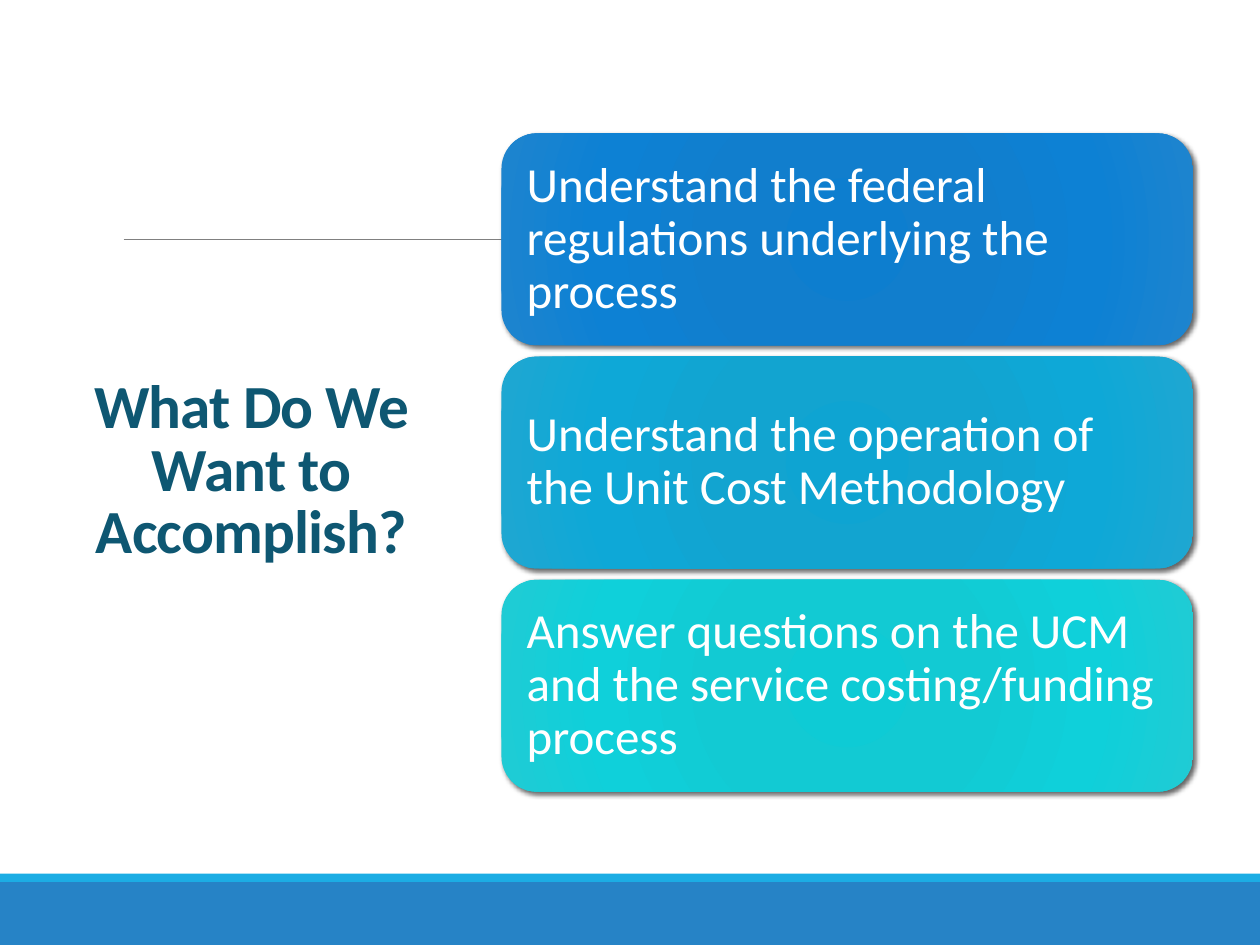
from lxml.etree import SubElement
from pptx import Presentation
from pptx.dml.color import RGBColor
from pptx.enum.shapes import MSO_CONNECTOR as Connector, MSO_SHAPE as Shape
from pptx.enum.text import MSO_ANCHOR as Anchor, PP_ALIGN as Align
from pptx.oxml import parse_xml
from pptx.oxml.ns import nsdecls, qn
from pptx.util import Cm, Pt

TITLE = "What Do We Want to Accomplish?"
GOALS = [
    ("Understand the federal regulations underlying the process",
     ("0D7ECF", "117ECD", "0D81D4", "1E84CE")),
    ("Understand the operation of the Unit Cost Methodology",
     ("0EA4D2", "12A4D0", "0EA8D7", "1FA7D1")),
    ("Answer questions on the UCM and the service costing/funding process",
     ("0ECBD5", "12CAD3", "0FD0DA", "20CBD4")),
]
STOPS = (0, 34, 70, 100)

FONT = "Calibri"
BLUE = RGBColor(0x26, 0x83, 0xC6)
CYAN = RGBColor(0x1C, 0xAD, 0xE4)
GREY = RGBColor(0x80, 0x80, 0x80)
TEAL = RGBColor(0x0E, 0x57, 0x72)
WHITE = RGBColor(0xFF, 0xFF, 0xFF)

SLIDE_W, SLIDE_H = Cm(25.4), Cm(19.05)
FOOTER_H, STRIPE_H = Cm(1.27), Cm(0.17)
CARD_X, CARD_Y = Cm(10.11), Cm(2.69)
CARD_W, CARD_H, CARD_GAP = Cm(13.94), Cm(4.27), Cm(0.23)
CARD_INSET = Cm(0.3)


def write(frame, text, size, color, align, spacing, bold=False):
    frame.word_wrap = True
    frame.vertical_anchor = Anchor.MIDDLE
    frame.text = text
    paragraph = frame.paragraphs[0]
    paragraph.alignment = align
    paragraph.line_spacing = spacing
    font = paragraph.runs[0].font
    font.name, font.size, font.bold = FONT, Pt(size), bold
    font.color.rgb = color
    return paragraph.runs[0]


def add_band(slide, top, height, color):
    band = slide.shapes.add_shape(Shape.RECTANGLE, 0, top, SLIDE_W, height)
    band.shadow.inherit = False
    band.fill.solid()
    band.fill.fore_color.rgb = color
    band.line.fill.background()


def fill_radial(shape, colors):
    stops = "".join(
        f'<a:gs pos="{stop * 1000}"><a:srgbClr val="{color}"/></a:gs>'
        for stop, color in zip(STOPS, colors))
    gradient = parse_xml(
        f'<a:gradFill {nsdecls("a")} rotWithShape="1"><a:gsLst>{stops}</a:gsLst>'
        '<a:path path="circle"><a:fillToRect l="100000" t="100000" '
        'r="100000" b="100000"/></a:path></a:gradFill>')
    shape.fill.background()
    properties = shape._element.spPr
    properties.replace(properties.find(qn("a:noFill")), gradient)


def cast_shadow(shape):
    shape.shadow.inherit = False
    effects = shape._element.spPr.find(qn("a:effectLst"))
    effects.append(parse_xml(
        f'<a:outerShdw {nsdecls("a")} blurRad="{Pt(3)}" dist="{Pt(2)}" '
        'dir="2700000" algn="ctr" rotWithShape="0"><a:srgbClr val="000000">'
        '<a:alpha val="60000"/></a:srgbClr></a:outerShdw>'))


def add_card(slide, top, goal, colors):
    card = slide.shapes.add_shape(
        Shape.ROUNDED_RECTANGLE, CARD_X, top, CARD_W, CARD_H)
    fill_radial(card, colors)
    card.line.fill.background()
    cast_shadow(card)
    frame = card.text_frame
    frame.margin_left = frame.margin_right = CARD_INSET
    frame.margin_top = frame.margin_bottom = CARD_INSET
    write(frame, goal, 28, WHITE, Align.LEFT, 0.9)


def main():
    deck = Presentation()
    deck.slide_width, deck.slide_height = SLIDE_W, SLIDE_H
    slide = deck.slides.add_slide(deck.slide_layouts[6])

    footer_top = SLIDE_H - FOOTER_H
    add_band(slide, footer_top, FOOTER_H, BLUE)
    add_band(slide, footer_top - STRIPE_H, STRIPE_H, CYAN)

    rule_y = CARD_Y + CARD_H // 2
    rule = slide.shapes.add_connector(
        Connector.STRAIGHT, Cm(2.49), rule_y, Cm(23.24), rule_y)
    rule.line.color.rgb = GREY
    rule.line.width = Pt(0.5)
    SubElement(rule._element.spPr, qn("a:effectLst"))

    title = slide.shapes.add_textbox(Cm(1.37), Cm(3.84), Cm(7.39), Cm(11.38))
    run = write(title.text_frame, TITLE, 35, TEAL, Align.CENTER, 0.85, bold=True)
    run.font._element.set("spc", "-50")

    for row, (goal, colors) in enumerate(GOALS):
        add_card(slide, CARD_Y + row * (CARD_H + CARD_GAP), goal, colors)

    deck.save("out.pptx")


if __name__ == "__main__":
    main()
